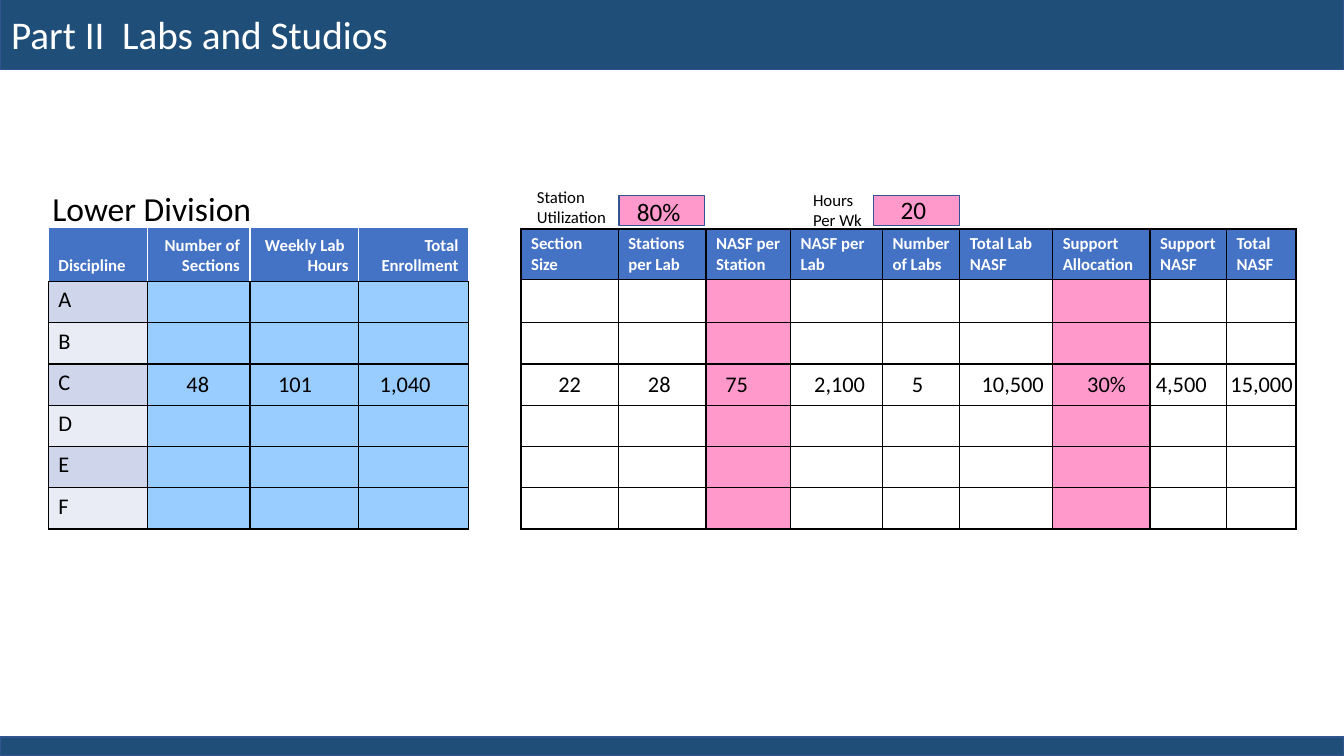
from pptx import Presentation
from pptx.dml.color import RGBColor
from pptx.enum.shapes import MSO_SHAPE as Shape
from pptx.enum.text import MSO_ANCHOR as Anchor, MSO_AUTO_SIZE as AutoSize, PP_ALIGN as Align
from pptx.oxml import parse_xml
from pptx.oxml.ns import nsdecls
from pptx.util import Cm, Pt

NAVY, OUTLINE, HEADER_BLUE = "1F4E79", "325491", "4472C4"
PINK, SKY, WHITE, BLACK = "FF99CC", "99CCFF", "FFFFFF", "000000"
ROW_TINTS = ["CFD5EA", "E9EBF5"]

TITLE = {"size": Pt(28), "color": WHITE}
HEADING = {"size": Pt(24), "color": BLACK}
RATE = {"size": Pt(18), "color": BLACK}
LABEL = {"size": Pt(12), "color": BLACK}
FIGURE = {"size": Pt(16), "color": BLACK}
COLUMN_HEAD = {"size": Pt(12), "bold": True, "color": WHITE}


def rgb(value):
    return RGBColor.from_string(value)


def apply_font(font, style):
    for key, value in {"name": "Calibri", **style}.items():
        if key == "color":
            font.color.rgb = rgb(value)
        else:
            setattr(font, key, value)


def add_text(slide, box, lines, style, wrap=False):
    frame = slide.shapes.add_textbox(*map(Cm, box)).text_frame
    frame.word_wrap = wrap
    frame.auto_size = AutoSize.SHAPE_TO_FIT_TEXT
    frame.text = lines
    for paragraph in frame.paragraphs:
        apply_font(paragraph.runs[0].font, style)


def add_box(slide, box, fill):
    panel = slide.shapes.add_shape(Shape.RECTANGLE, *map(Cm, box))
    panel.shadow.inherit = False
    panel.fill.solid()
    panel.fill.fore_color.rgb = rgb(fill)
    panel.line.color.rgb = rgb(OUTLINE)
    panel.line.width = Pt(1)


def format_cell(cell, fill, borders):
    # Borders come before the fill in the cell properties
    properties = cell._tc.get_or_add_tcPr()
    for side, color in zip("LRTB", borders):
        properties.append(parse_xml(
            f'<a:ln{side} {nsdecls("a")} w="12700"><a:solidFill>'
            f'<a:srgbClr val="{color}"/></a:solidFill></a:ln{side}>'))
    if fill:
        cell.fill.solid()
        cell.fill.fore_color.rgb = rgb(fill)
    else:
        cell.fill.background()


def write_cell(cell, words, style, align=Align.LEFT):
    cell.text = words
    paragraph = cell.text_frame.paragraphs[0]
    paragraph.alignment = align
    apply_font(paragraph.runs[0].font, style)


def add_grid(slide, left, top, widths, heights):
    grid = slide.shapes.add_table(len(heights), len(widths), Cm(left), Cm(top),
                                  Cm(sum(widths)), Cm(sum(heights))).table
    grid.first_row = grid.horz_banding = False
    for column, width in zip(grid.columns, widths):
        column.width = Cm(width)
    for row, height in zip(grid.rows, heights):
        row.height = Cm(height)
    return grid


def add_figures(slide, left, top, figures):
    for words, offset, width in figures:
        add_text(slide, (left + offset, top, width, 0.94), words, FIGURE)


def add_bars(slide, width, height):
    add_box(slide, (0, -0.08, width, 1.83), NAVY)
    add_box(slide, (0, height - 0.48, width, 0.48), NAVY)
    add_text(slide, (0.03, 0.13, 10.13, 1.45), "Part II  Labs and Studios", TITLE)


def add_enrollment(slide, left, top):
    heads = ["Discipline", "Number of Sections", "Weekly Lab  Hours", "Total Enrollment"]
    disciplines = "ABCDEF"
    grid = add_grid(slide, left, top, [2.49, 2.59, 2.74, 2.77],
                    [1.37] + [1.04] * len(disciplines))

    # Column heads
    for col, head in enumerate(heads):
        cell = grid.cell(0, col)
        cell.vertical_anchor = Anchor.BOTTOM
        write_cell(cell, head, COLUMN_HEAD, Align.RIGHT if col else Align.LEFT)
        format_cell(cell, HEADER_BLUE, [WHITE, WHITE, WHITE, BLACK])

    # One row per discipline
    for row, discipline in enumerate(disciplines, 1):
        write_cell(grid.cell(row, 0), discipline, FIGURE)
        for col in range(len(heads)):
            tint = SKY if col else ROW_TINTS[(row - 1) % 2]
            format_cell(grid.cell(row, col), tint, [BLACK] * 4)

    add_text(slide, (left - 0.15, top - 1.1, 5.56, 1.27), "Lower Division", HEADING)
    add_figures(slide, left, top + 3.47, [
        ("48", 3.23, 1.09), ("101", 5.54, 1.37), ("1,040", 8.1, 1.8)])


def add_space_needs(slide, left, top):
    heads = ["Section Size", "Stations per Lab", "NASF per Station", "NASF per Lab",
             "Number of Labs", "Total Lab NASF", "Support Allocation",
             "Support NASF", "Total NASF"]
    assumptions = ["NASF per Station", "Support Allocation"]
    heights = [1.27, 1.09] + [1.04] * 5
    grid = add_grid(slide, left, top,
                    [2.45, 2.21, 2.13, 2.32, 1.95, 2.34, 2.45, 1.93, 1.75], heights)

    # Column heads and empty cells, with the assumptions in pink
    for col, head in enumerate(heads):
        write_cell(grid.cell(0, col), head, COLUMN_HEAD)
        body = PINK if head in assumptions else None
        for row in range(len(heights)):
            format_cell(grid.cell(row, col), body if row else HEADER_BLUE, [BLACK] * 4)

    # Rates above the table
    for offset in (2.47, 8.89):
        add_box(slide, (left + offset, top - 0.84, 2.16, 0.76), PINK)
    add_text(slide, (left + 2.67, top - 0.94, 1.63, 1.02), "80%", RATE)
    add_text(slide, (left + 9.32, top - 0.99, 1.17, 1.02), "20", RATE)
    add_text(slide, (left + 0.15, top - 1.2, 3.02, 1.27), "Station Utilization", LABEL, True)
    add_text(slide, (left + 7.11, top - 1.12, 3.02, 1.27), "Hours\nPer Wk", LABEL, True)

    add_figures(slide, left, top + 3.42, [
        ("22", 0.69, 1.09), ("28", 2.95, 1.09), ("75", 4.9, 1.09),
        ("2,100", 7.14, 1.8), ("5", 9.6, 0.81), ("10,500", 11.36, 2.11),
        ("30%", 14.02, 1.5), ("4,500", 15.75, 1.8), ("15,000", 17.63, 2.11)])


def main():
    deck = Presentation()
    width, height = 33.87, 19.05
    deck.slide_width, deck.slide_height = Cm(width), Cm(height)
    slide = deck.slides.add_slide(deck.slide_layouts[6])
    add_bars(slide, width, height)
    add_enrollment(slide, 1.22, 5.72)
    add_space_needs(slide, 13.13, 5.77)
    deck.save("out.pptx")


if __name__ == "__main__":
    main()
